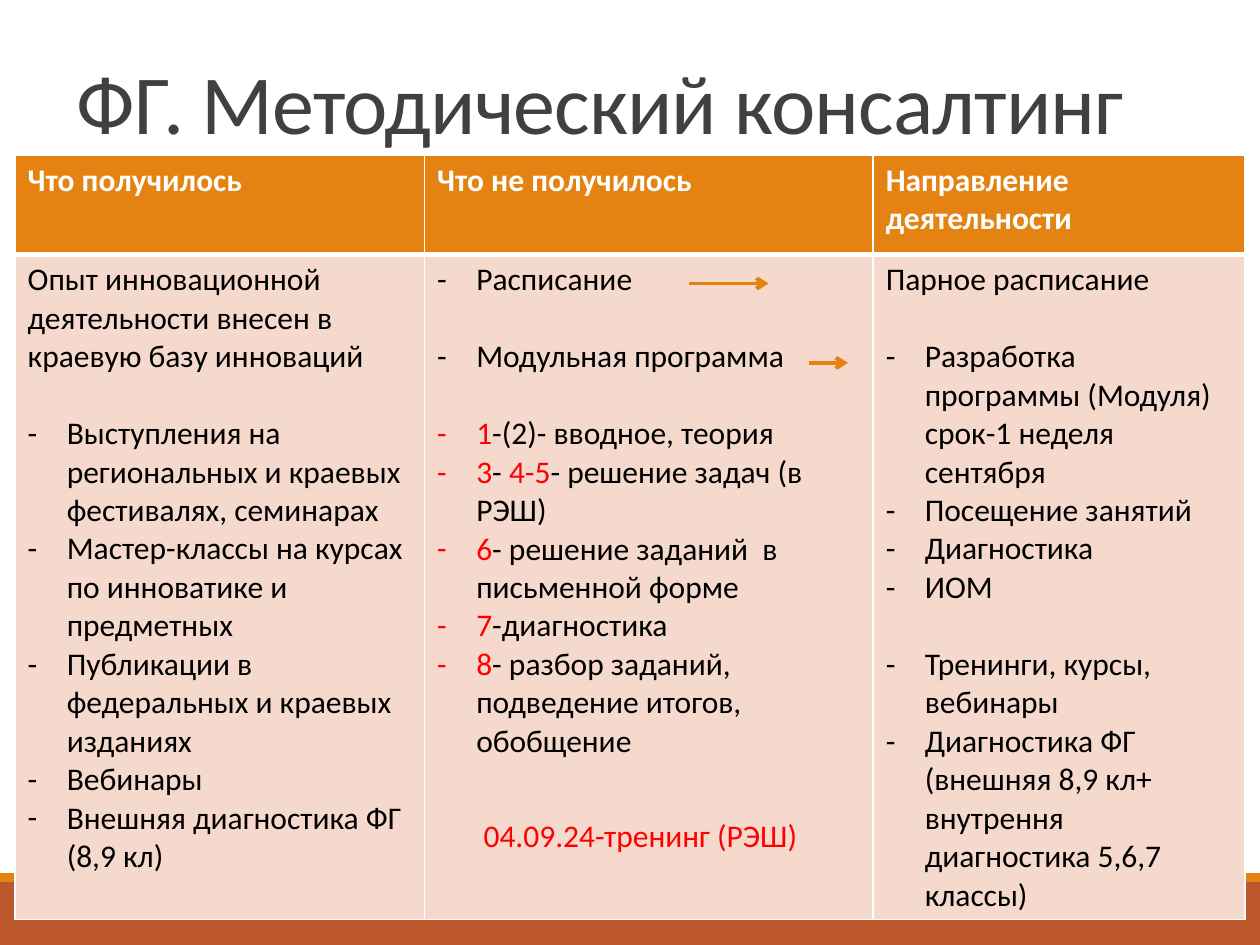
from lxml.etree import SubElement
from pptx import Presentation
from pptx.dml.color import RGBColor
from pptx.enum.shapes import MSO_CONNECTOR, MSO_SHAPE
from pptx.enum.text import MSO_ANCHOR
from pptx.oxml.ns import qn
from pptx.util import Inches, Pt

FONT = "Calibri"
ORANGE, RUST, PINK = "E48312", "BD582C", "F5D9CC"
WHITE, BLACK, RED, GREY = "FFFFFF", "000000", "FF0000", "404040"
LINE_GAP = 22

COLUMN_WIDTHS = (3.25, 3.56, 2.95)
ROW_HEIGHTS = (0.79, 5.28)
HEADINGS = ("Что получилось", "Что не получилось", "Направление деятельности")


def color(code):
    """Turn a hex string into a colour."""
    return RGBColor.from_string(code)


def add_span(para, text, code, size=18, bold=False):
    """Add one run of text to a paragraph."""
    span = para.add_run()
    span.text = text
    span.font.name = FONT
    span.font.size = Pt(size)
    span.font.bold = bold
    span.font.color.rgb = color(code)
    return span


def plain(text, gap=False):
    """Describe a paragraph without a bullet."""
    return [(text, BLACK)], False, gap


def item(text, gap=False):
    """Describe a dashed paragraph in black."""
    return [(text, BLACK)], True, gap


def lesson(*texts, gap=False):
    """Describe a dashed paragraph whose runs alternate red and black."""
    spans = [(text, BLACK if i % 2 else RED) for i, text in enumerate(texts)]
    return spans, True, gap


BODIES = (
    (
        plain("Опыт инновационной деятельности внесен в краевую базу инноваций"),
        item("Выступления на региональных и краевых фестивалях, семинарах", gap=True),
        item("Мастер-классы на курсах по инноватике и предметных"),
        item("Публикации в федеральных и краевых изданиях"),
        item("Вебинары"),
        item("Внешняя диагностика ФГ (8,9 кл)"),
    ),
    (
        item("Расписание"),
        item("Модульная программа", gap=True),
        lesson("1", "-(2)- вводное, теория", gap=True),
        lesson("3", "- ", "4-5", "- решение задач (в РЭШ)"),
        lesson("6", "- решение заданий  в письменной форме"),
        lesson("7", "-диагностика"),
        lesson("8", "- разбор заданий, подведение итогов, обобщение"),
    ),
    (
        plain("Парное расписание"),
        item("Разработка программы (Модуля) срок-1 неделя сентября", gap=True),
        item("Посещение занятий"),
        item("Диагностика"),
        item("ИОМ"),
        item("Тренинги, курсы, вебинары", gap=True),
        item("Диагностика ФГ (внешняя 8,9 кл+ внутрення диагностика 5,6,7 классы)"),
    ),
)


def add_dash(para):
    """Give a paragraph a hanging dash."""
    props = para._p.get_or_add_pPr()
    props.set("marL", str(Inches(0.31)))
    props.set("indent", str(-Inches(0.31)))
    SubElement(props, qn("a:buFont"), typeface=FONT)
    SubElement(props, qn("a:buChar"), char="-")


def style_cell(cell, fill, bottom):
    """Set the white borders and the fill of a cell."""
    props = cell._tc.get_or_add_tcPr()
    for side, width in (("L", 1), ("R", 1), ("T", 1), ("B", bottom)):
        edge = SubElement(props, qn(f"a:ln{side}"), w=str(Pt(width)))
        solid = SubElement(edge, qn("a:solidFill"))
        SubElement(solid, qn("a:srgbClr"), val=WHITE)
    cell.fill.solid()
    cell.fill.fore_color.rgb = color(fill)


def fill_body(frame, paragraphs):
    """Write the paragraphs of one body cell."""
    for i, (spans, dashed, gap) in enumerate(paragraphs):
        para = frame.add_paragraph() if i else frame.paragraphs[0]
        if gap:
            para.space_before = Pt(LINE_GAP)
        if dashed:
            add_dash(para)
        for text, code in spans:
            add_span(para, text, code)


def add_band(page, left, top, width, height, code):
    """Draw one plain band."""
    band = page.shapes.add_shape(
        MSO_SHAPE.RECTANGLE, Inches(left), Inches(top), Inches(width), Inches(height))
    band.shadow.inherit = False
    band.fill.solid()
    band.fill.fore_color.rgb = color(code)
    band.line.fill.background()


def add_footer(page, left, top, width, height):
    """Draw the footer with its thin upper stripe."""
    stripe = 0.07
    add_band(page, left, top + stripe, width, height - stripe, RUST)
    add_band(page, left, top, width, stripe, ORANGE)


def add_text(page, left, top, width, height):
    """Add a wrapping text box and return its frame."""
    box = page.shapes.add_textbox(
        Inches(left), Inches(top), Inches(width), Inches(height))
    box.text_frame.word_wrap = True
    return box.text_frame


def add_title(page, left, top, width, height):
    """Write the title at the bottom of its box."""
    frame = add_text(page, left, top, width, height)
    frame.vertical_anchor = MSO_ANCHOR.BOTTOM
    para = frame.paragraphs[0]
    para.line_spacing = 0.85
    span = add_span(para, "ФГ. Методический консалтинг", GREY, size=48)
    span.font._element.set("spc", "-50")


def add_results(page, left, top):
    """Build the table of results."""
    table = page.shapes.add_table(
        len(ROW_HEIGHTS), len(COLUMN_WIDTHS), Inches(left), Inches(top),
        Inches(sum(COLUMN_WIDTHS)), Inches(sum(ROW_HEIGHTS))).table
    for row, height in zip(table.rows, ROW_HEIGHTS):
        row.height = Inches(height)
    for i, width in enumerate(COLUMN_WIDTHS):
        table.columns[i].width = Inches(width)
        head, body = table.cell(0, i), table.cell(1, i)
        style_cell(head, ORANGE, bottom=3)
        style_cell(body, PINK, bottom=1)
        add_span(head.text_frame.paragraphs[0], HEADINGS[i], WHITE, bold=True)
        fill_body(body.text_frame, BODIES[i])


def add_arrow(page, left, top, width):
    """Draw a level arrow pointing right."""
    arrow = page.shapes.add_connector(
        MSO_CONNECTOR.STRAIGHT, Inches(left), Inches(top),
        Inches(left + width), Inches(top))
    arrow.line.color.rgb = color(ORANGE)
    arrow.line.width = Pt(2.25)
    props = arrow._element.spPr
    SubElement(props.find(qn("a:ln")), qn("a:tailEnd"), type="arrow")
    SubElement(props, qn("a:effectLst"))


def add_training(page, left, top, width, height):
    """Write the date of the training."""
    frame = add_text(page, left, top, width, height)
    add_span(frame.paragraphs[0], "04.09.24-тренинг (РЭШ)", RED)


def main():
    """Build and save the deck."""
    deck = Presentation()
    deck.slide_width, deck.slide_height = Inches(10), Inches(7.5)
    page = deck.slides.add_slide(deck.slide_layouts[6])
    add_footer(page, 0, 6.93, 10, 0.57)
    add_title(page, 0.51, 0, 9, 1.25)
    add_results(page, 0.12, 1.23)
    add_arrow(page, 5.47, 2.25, 0.63)
    add_arrow(page, 6.42, 2.88, 0.31)
    add_training(page, 3.74, 6.43, 2.83, 0.4)
    deck.save("out.pptx")


if __name__ == "__main__":
    main()
